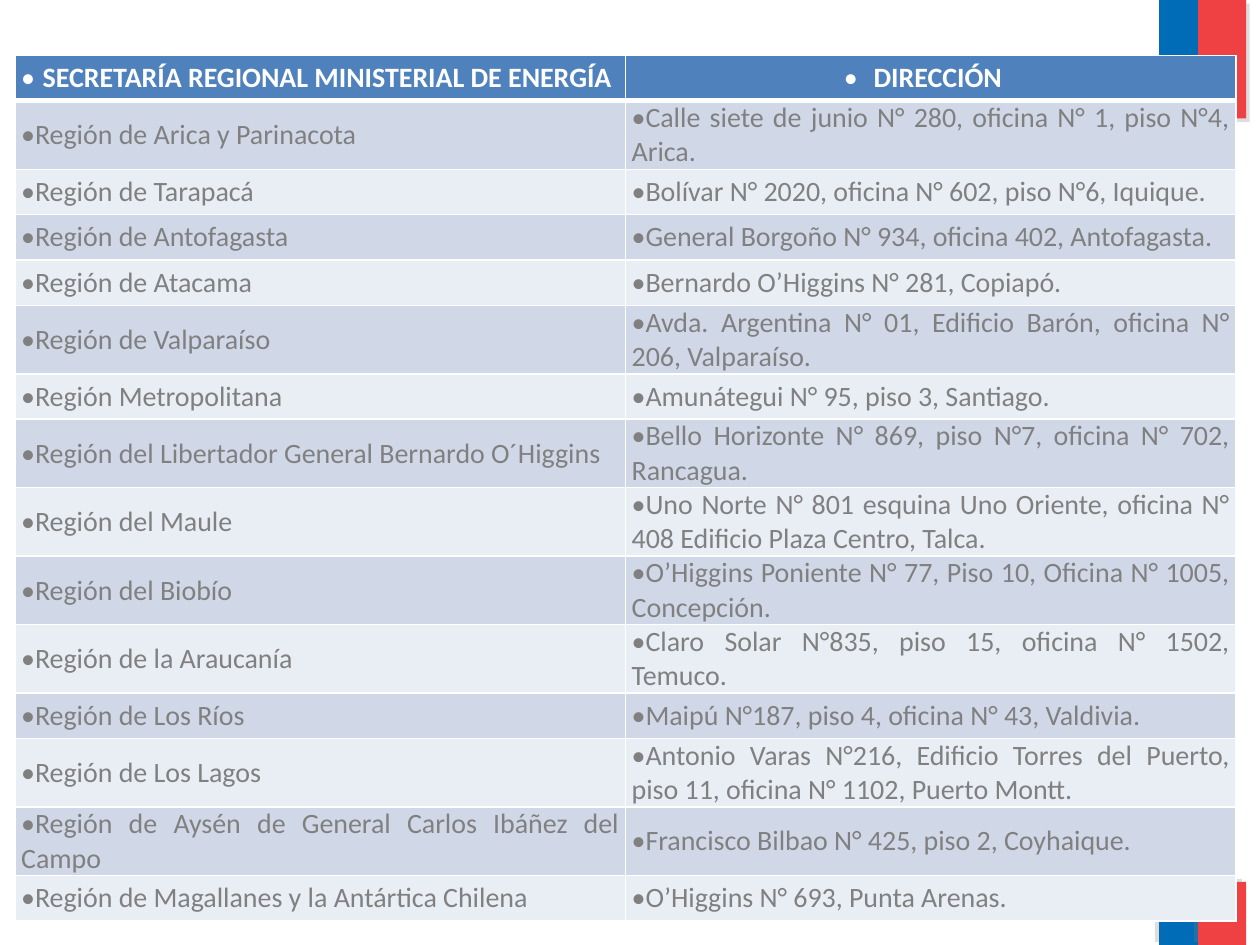
"""Build the slide listing the regional energy offices and their addresses."""
from lxml import etree
from pptx import Presentation
from pptx import util as u
from pptx.dml.color import RGBColor
from pptx.enum import shapes, text
from pptx.oxml.ns import qn

COLORS = {
    "blue": "006CB7", "red": "EF4144", "shadow": "808080", "header": "4F81BD",
    "odd": "D0D8E8", "even": "E9EDF4", "white": "FFFFFF", "body": "808080",
}
FLAG_BARS = [
    ("blue", 9.2, -0.01, 0.31, 0.95, 45),
    ("red", 9.51, 0, 0.38, 0.94, 45),
    ("blue", 9.2, 7, 0.31, 0.5, 215),
    ("red", 9.51, 7, 0.38, 0.5, 215),
]
OFFICES = [
    ("SECRETARÍA REGIONAL MINISTERIAL DE ENERGÍA", "DIRECCIÓN"),
    ("Región de Arica y Parinacota", "Calle siete de junio N° 280, oficina N° 1, piso N°4, Arica."),
    ("Región de Tarapacá", "Bolívar N° 2020, oficina N° 602, piso N°6, Iquique."),
    ("Región de Antofagasta", "General Borgoño N° 934, oficina 402, Antofagasta."),
    ("Región de Atacama", "Bernardo O’Higgins N° 281, Copiapó."),
    ("Región de Valparaíso", "Avda. Argentina N° 01, Edificio Barón, oficina N° 206, Valparaíso."),
    ("Región Metropolitana", "Amunátegui N° 95, piso 3, Santiago."),
    ("Región del Libertador General Bernardo O´Higgins",
     "Bello Horizonte N° 869, piso N°7, oficina N° 702, Rancagua."),
    ("Región del Maule",
     "Uno Norte N° 801 esquina Uno Oriente, oficina N° 408 Edificio Plaza Centro, Talca."),
    ("Región del Biobío", "O’Higgins Poniente N° 77, Piso 10, Oficina N° 1005, Concepción."),
    ("Región de la Araucanía", "Claro Solar N°835, piso 15, oficina N° 1502, Temuco."),
    ("Región de Los Ríos", "Maipú N°187, piso 4, oficina N° 43, Valdivia."),
    ("Región de Los Lagos",
     "Antonio Varas N°216, Edificio Torres del Puerto, piso 11, oficina N° 1102, Puerto Montt."),
    ("Región de Aysén de General Carlos Ibáñez del Campo",
     "Francisco Bilbao N° 425, piso 2, Coyhaique."),
    ("Región de Magallanes y la Antártica Chilena", "O’Higgins N° 693, Punta Arenas."),
]
ROW_HEIGHT = 0.36
TABLE_WIDTH = 9.69


def rgb(name):
    return RGBColor.from_string(COLORS[name])


def add_child(parent, tag, **attributes):
    child = etree.SubElement(parent, qn(tag))
    for key, value in attributes.items():
        child.set(key, str(value))
    return child


def add_flag_bar(slide, color, left, top, width, height, angle):
    bar = slide.shapes.add_shape(
        shapes.MSO_SHAPE.RECTANGLE, *map(u.Inches, (left, top, width, height)))
    bar.fill.solid()
    bar.fill.fore_color.rgb = rgb(color)
    bar.line.fill.background()
    bar.shadow.inherit = False
    effects = bar.element.spPr.find(qn("a:effectLst"))
    shadow = add_child(effects, "a:outerShdw", blurRad=0, dist=u.Pt(3),
                       dir=angle * 60000, algn="ctr", rotWithShape=0)
    tint = add_child(shadow, "a:srgbClr", val=COLORS["shadow"])
    add_child(tint, "a:alpha", val=25000)


def set_borders(cell, widths):
    properties = cell._tc.get_or_add_tcPr()
    for side, width in widths.items():
        line = add_child(properties, f"a:ln{side}", w=u.Pt(width))
        add_child(add_child(line, "a:solidFill"), "a:srgbClr", val=COLORS["white"])


def fill_cell(cell, content, row):
    is_header = row == 0
    set_borders(cell, {"L": 1, "R": 1, "T": 3 if row == 1 else 1, "B": 3 if is_header else 1})
    cell.fill.solid()
    cell.fill.fore_color.rgb = rgb("header" if is_header else "odd" if row % 2 else "even")
    cell.vertical_anchor = text.MSO_ANCHOR.MIDDLE
    cell.margin_left = cell.margin_right = u.Pt(3.5)
    cell.margin_top = cell.margin_bottom = 0

    paragraph = cell.text_frame.paragraphs[0]
    paragraph.text = content
    paragraph.alignment = text.PP_ALIGN.CENTER if is_header else text.PP_ALIGN.JUSTIFY
    paragraph.space_before = u.Pt(6)
    properties = paragraph._p.get_or_add_pPr()
    add_child(properties, "a:buFont", typeface="Calibri")
    add_child(properties, "a:buChar", char="•")
    font = paragraph.runs[0].font
    font.name = "Calibri"
    font.size = u.Pt(16)
    font.bold = is_header
    font.color.rgb = rgb("white" if is_header else "body")


def add_office_table(slide):
    columns = len(OFFICES[0])
    table = slide.shapes.add_table(
        len(OFFICES), columns, u.Inches(0.12), u.Inches(0.44),
        u.Inches(TABLE_WIDTH), u.Inches(ROW_HEIGHT * len(OFFICES))).table
    for column in table.columns:
        column.width = u.Inches(TABLE_WIDTH / columns)
    for row, office in enumerate(OFFICES):
        table.rows[row].height = u.Inches(ROW_HEIGHT)
        for column, content in enumerate(office):
            fill_cell(table.cell(row, column), content, row)


def main():
    presentation = Presentation()
    presentation.slide_width = u.Inches(10)
    presentation.slide_height = u.Inches(7.5)
    slide = presentation.slides.add_slide(presentation.slide_layouts[6])
    for bar in FLAG_BARS:
        add_flag_bar(slide, *bar)
    add_office_table(slide)
    presentation.save("out.pptx")


if __name__ == "__main__":
    main()
